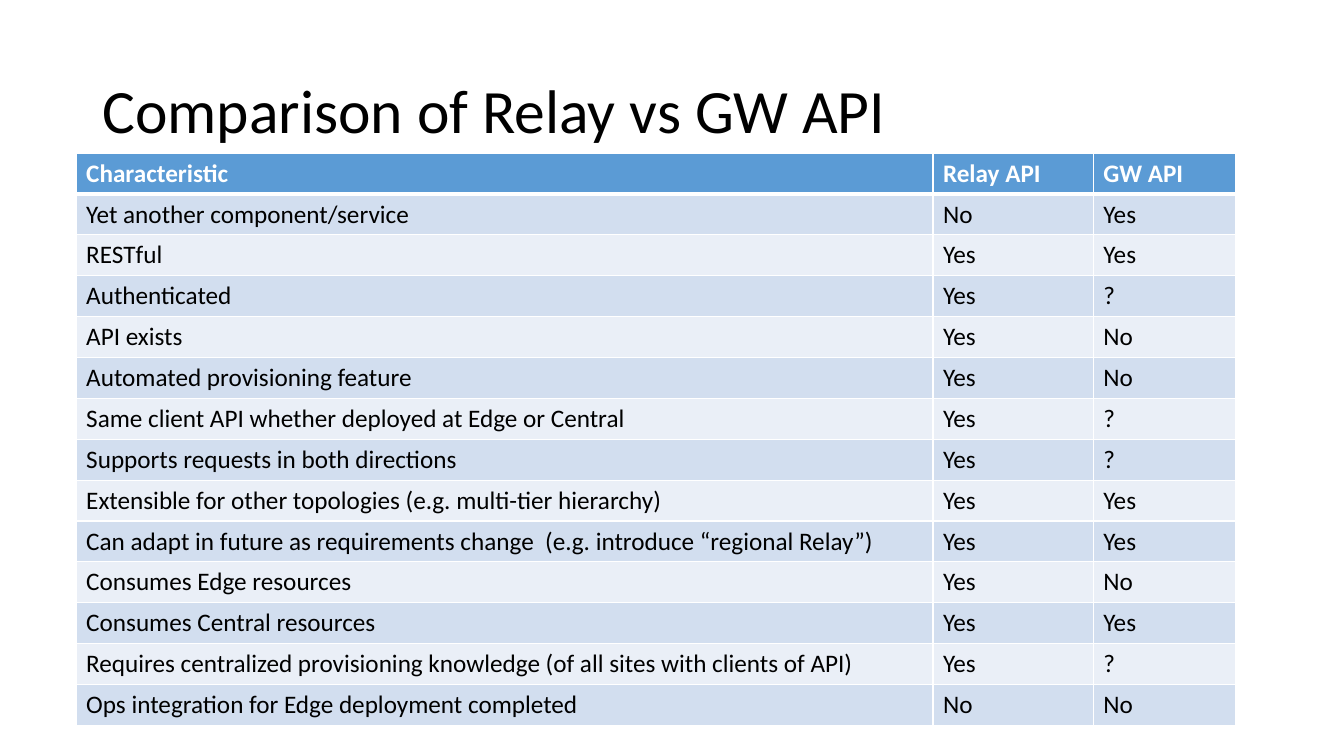
from dataclasses import dataclass

import pptx
import pptx.dml.color
import pptx.enum.text
import pptx.oxml
import pptx.oxml.ns
import pptx.presentation
import pptx.slide
import pptx.table
import pptx.text.text
import pptx.util

Pt = pptx.util.Pt
FONT = "Calibri"
COLORS = {
    "text": "000000",
    "white": "FFFFFF",
    "header": "5B9BD5",
    "band_dark": "D2DEEF",
    "band_light": "EAEFF7",
}
COLUMN_WIDTHS = (612, 114.5, 101.5)
ROW_HEIGHT = 29.2


@dataclass(frozen=True)
class Row:
    characteristic: str
    relay: str
    gateway: str


HEADER = Row("Characteristic", "Relay API", "GW API")
ROWS = [
    Row("Yet another component/service", "No", "Yes"),
    Row("RESTful", "Yes", "Yes"),
    Row("Authenticated", "Yes", "?"),
    Row("API exists", "Yes", "No"),
    Row("Automated provisioning feature", "Yes", "No"),
    Row("Same client API whether deployed at Edge or Central", "Yes", "?"),
    Row("Supports requests in both directions", "Yes", "?"),
    Row("Extensible for other topologies (e.g. multi-tier hierarchy)", "Yes", "Yes"),
    Row("Can adapt in future as requirements change  (e.g. introduce “regional Relay”)", "Yes", "Yes"),
    Row("Consumes Edge resources", "Yes", "No"),
    Row("Consumes Central resources", "Yes", "Yes"),
    Row("Requires centralized provisioning knowledge (of all sites with clients of API)", "Yes", "?"),
    Row("Ops integration for Edge deployment completed", "No", "No"),
]


def rgb(name: str) -> pptx.dml.color.RGBColor:
    return pptx.dml.color.RGBColor.from_string(COLORS[name])


def write_text(tf: pptx.text.text.TextFrame, text: str, *, size: float = 18,
               color: str = "text", bold: bool = False, line_spacing: float = 1.0) -> None:
    p = tf.paragraphs[0]
    p.alignment = pptx.enum.text.PP_ALIGN.LEFT
    p.line_spacing = line_spacing
    r = p.add_run()
    r.text = text
    r.font.name = FONT
    r.font.size = Pt(size)
    r.font.bold = bold
    r.font.color.rgb = rgb(color)


def set_borders(cell: pptx.table._Cell, top: float, bottom: float) -> None:
    """Draw white borders; the side borders are always 1 pt."""
    tc_pr = cell._tc.get_or_add_tcPr()
    widths = {"lnL": 1, "lnR": 1, "lnT": top, "lnB": bottom}
    for i, (tag, width) in enumerate(widths.items()):
        # Borders must stand before the fill in the cell properties.
        tc_pr.insert(i, pptx.oxml.parse_xml(
            f'<a:{tag} {pptx.oxml.ns.nsdecls("a")} w="{Pt(width)}"><a:solidFill>'
            f'<a:srgbClr val="{COLORS["white"]}"/></a:solidFill></a:{tag}>'))


def add_title(s: pptx.slide.Slide, text: str) -> None:
    sp = s.shapes.title
    sp.left, sp.top, sp.width, sp.height = Pt(66), Pt(28.75), Pt(828), Pt(104.4)
    tf = sp.text_frame
    tf.word_wrap = True
    tf.vertical_anchor = pptx.enum.text.MSO_ANCHOR.MIDDLE
    write_text(tf, text, size=44, line_spacing=0.9)


def add_comparison_table(s: pptx.slide.Slide, rows: list[Row]) -> None:
    table = s.shapes.add_table(
        len(rows), len(COLUMN_WIDTHS), Pt(54.4), Pt(109.4),
        Pt(sum(COLUMN_WIDTHS)), Pt(ROW_HEIGHT * len(rows))).table
    for column, width in zip(table.columns, COLUMN_WIDTHS):
        column.width = Pt(width)
    for i, row in enumerate(rows):
        table.rows[i].height = Pt(ROW_HEIGHT)
        is_header = i == 0
        fill = "header" if is_header else "band_dark" if i % 2 else "band_light"
        for j, text in enumerate((row.characteristic, row.relay, row.gateway)):
            cell = table.cell(i, j)
            write_text(cell.text_frame, text, bold=is_header,
                       color="white" if is_header else "text")
            cell.fill.solid()
            cell.fill.fore_color.rgb = rgb(fill)
            set_borders(cell, top=3 if i == 1 else 1, bottom=3 if is_header else 1)


def main() -> None:
    prs = pptx.Presentation()
    prs.slide_width, prs.slide_height = Pt(960), Pt(540)
    s = prs.slides.add_slide(prs.slide_layouts.get_by_name("Title Only"))
    add_title(s, "Comparison of Relay vs GW API")
    add_comparison_table(s, [HEADER, *ROWS])
    prs.save("out.pptx")


if __name__ == "__main__":
    main()
